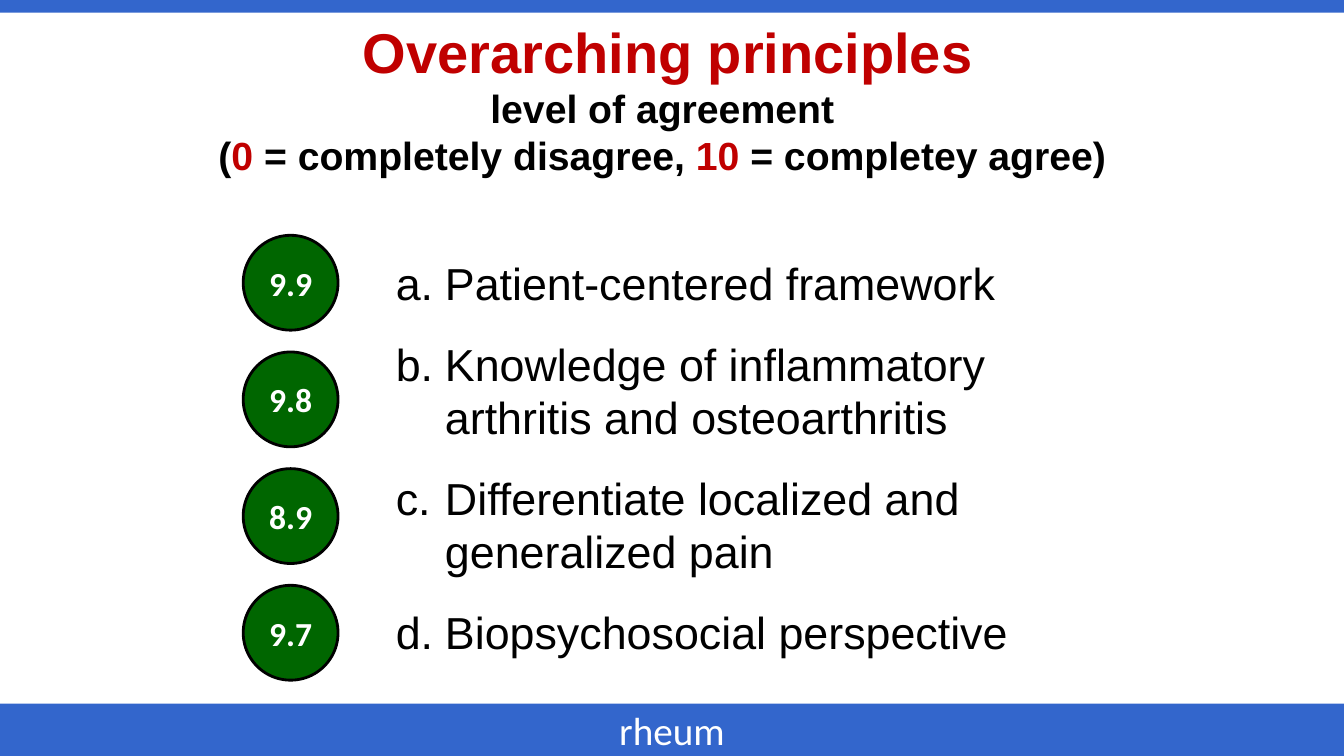
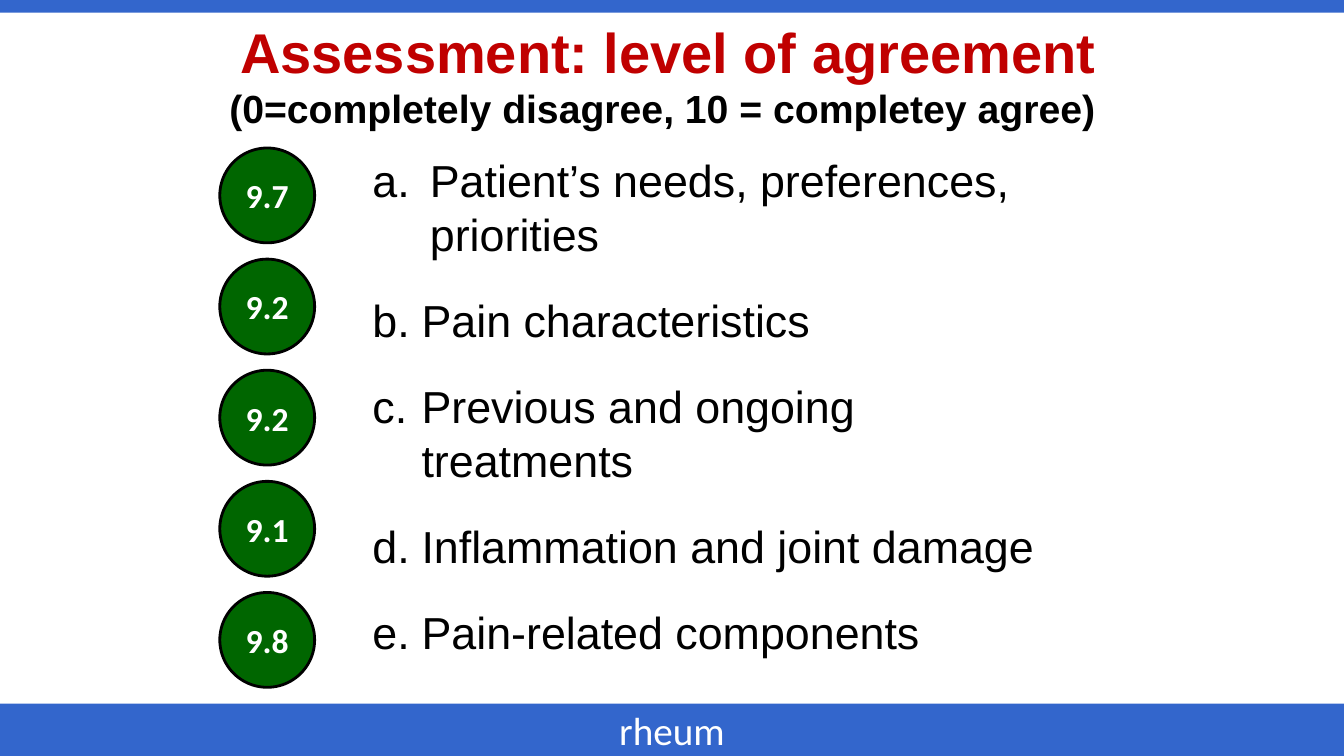
from dataclasses import dataclass
from typing import Any

from lxml.etree import SubElement
from pptx import Presentation
from pptx.dml.color import RGBColor
from pptx.enum.shapes import MSO_SHAPE
from pptx.enum.text import MSO_ANCHOR, MSO_AUTO_SIZE, PP_ALIGN
from pptx.oxml.ns import qn
from pptx.util import Cm, Pt

COLORS = {"blue": "3366CC", "green": "006600", "red": "C00000",
          "black": "000000", "white": "FFFFFF"}
FORMATS: dict[str, dict[str, Any]] = {
    "title": {"name": "Arial", "size": Pt(40), "bold": True},
    "subtitle": {"name": "Arial", "size": Pt(28), "bold": True},
    "item": {"name": "Arial", "size": Pt(32), "bold": False},
    "badge": {"name": "Calibri", "size": Pt(24), "bold": True},
    "footer": {"name": "Calibri", "size": Pt(28), "bold": False},
}
FRAME = {"word_wrap": True, "auto_size": MSO_AUTO_SIZE.NONE,
         "vertical_anchor": MSO_ANCHOR.TOP}
LEADING = 1.2
WIDTH, HEIGHT = 33.87, 19.05
BADGE_SIZE = 2.39
MASTER_FIRST_ID = 101


@dataclass(frozen=True)
class Item:
    score: str
    text: str
    indent: float = 1.24


@dataclass(frozen=True)
class Agreement:
    title: str
    subtitles: list[list[tuple[str, str]]]
    items: list[Item]
    badge_left: float
    badge_top: float
    pitch: float
    list_top: float
    gap: float


SLIDES = [
    Agreement(
        "Overarching principles",
        [[("level of agreement ", "black")],
         [("(", "black"), ("0", "red"), (" = completely disagree, ", "black"),
          ("10", "red"), (" = completey agree) ", "black")]],
        [Item("9.9", "Patient-centered framework"),
         Item("9.8", "Knowledge of inflammatory\varthritis and osteoarthritis"),
         Item("8.9", "Differentiate localized and\vgeneralized pain"),
         Item("9.7", "Biopsychosocial perspective")],
        6.13, 5.93, 2.94, 6.32, 19),
    Agreement(
        "Assessment: level of agreement",
        [[("(0=completely disagree, 10 = completey agree) ", "black")]],
        [Item("9.7", "Patient’s needs, preferences,\vpriorities", 1.45),
         Item("9.2", "Pain characteristics"),
         Item("9.2", "Previous and ongoing\vtreatments"),
         Item("9.1", "Inflammation and joint damage"),
         Item("9.8", "Pain-related components")],
        5.54, 3.73, 2.8, 3.73, 23),
]


def rgb(color: str) -> RGBColor:
    return RGBColor.from_string(COLORS[color])


def set_all(obj: Any, values: dict[str, Any]) -> None:
    for name, value in values.items():
        setattr(obj, name, value)


def place(sp: Any, left: float, top: float, width: float, height: float) -> None:
    set_all(sp, {"left": Cm(left), "top": Cm(top),
                 "width": Cm(width), "height": Cm(height)})


def style_run(r: Any, style: str, color: str) -> None:
    set_all(r.font, FORMATS[style])
    r.font.color.rgb = rgb(color)


def space(p: Any, style: str, before: float = 0) -> None:
    leading = FORMATS[style]["size"].pt * LEADING
    set_all(p, {"line_spacing": Pt(leading), "space_before": Pt(before),
                "space_after": Pt(0)})


def add_filled(shapes: Any, kind: MSO_SHAPE, box: tuple, color: str) -> Any:
    sp = shapes.add_shape(kind, *map(Cm, box))
    sp.shadow.inherit = False
    sp.fill.solid()
    sp.fill.fore_color.rgb = rgb(color)
    sp.line.fill.background()
    return sp


def add_master_bands(prs: Any, slide: Any) -> None:
    bands = [add_filled(slide.shapes, MSO_SHAPE.RECTANGLE, box, "blue")
             for box in ((0, 0, WIDTH, 0.32), (0, 17.73, WIDTH, 1.32))]
    footer = slide.shapes.add_textbox(Cm(0), Cm(17.68), Cm(WIDTH), Cm(1.37))
    set_all(footer.text_frame, FRAME)
    p = footer.text_frame.paragraphs[0]
    p.alignment = PP_ALIGN.CENTER
    r = p.add_run()
    r.text = "rheum"
    style_run(r, "footer", "white")
    for number, sp in enumerate((*bands, footer), MASTER_FIRST_ID):
        sp.element.nvSpPr.cNvPr.set("id", str(number))
        prs.slide_master.shapes.element.append(sp.element)


def fill_title(sp: Any, page: Agreement) -> None:
    place(sp, 4.94, 0.31, 23.77, 1.99 + 1.19 * len(page.subtitles))
    tf = sp.text_frame
    set_all(tf, FRAME)
    lines = [[(page.title, "red")], *page.subtitles]
    for i, line in enumerate(lines):
        p = tf.add_paragraph() if i else tf.paragraphs[0]
        style = "subtitle" if i else "title"
        p.alignment = PP_ALIGN.CENTER
        space(p, style)
        for text, color in line:
            r = p.add_run()
            r.text = text
            style_run(r, style, color)


def fill_list(sp: Any, page: Agreement) -> None:
    place(sp, page.badge_left + 3.59, page.list_top, 17.5, 17.2 - page.list_top)
    tf = sp.text_frame
    set_all(tf, FRAME)
    for i, item in enumerate(page.items):
        p = tf.add_paragraph() if i else tf.paragraphs[0]
        p.text = item.text
        pPr = p._p.get_or_add_pPr()
        pPr.set("marL", str(Cm(item.indent)))
        pPr.set("indent", str(-Cm(item.indent)))
        SubElement(pPr, qn("a:buFont"), typeface="Arial")
        SubElement(pPr, qn("a:buAutoNum"), type="alphaLcPeriod")
        p.alignment = PP_ALIGN.LEFT
        space(p, "item", page.gap if i else 0)
        for r in p.runs:
            style_run(r, "item", "black")


def add_badge(shapes: Any, score: str, left: float, top: float) -> None:
    sp = add_filled(shapes, MSO_SHAPE.OVAL,
                    (left, top, BADGE_SIZE, BADGE_SIZE), "green")
    sp.line.color.rgb = rgb("black")
    sp.line.width = Pt(2)
    tf = sp.text_frame
    set_all(tf, {"word_wrap": False, "vertical_anchor": MSO_ANCHOR.MIDDLE})
    p = tf.paragraphs[0]
    p.alignment = PP_ALIGN.CENTER
    r = p.add_run()
    r.text = score
    style_run(r, "badge", "white")


def main() -> None:
    prs = Presentation()
    set_all(prs, {"slide_width": Cm(WIDTH), "slide_height": Cm(HEIGHT)})
    for i, page in enumerate(SLIDES):
        slide = prs.slides.add_slide(prs.slide_layouts[1])
        if i == 0:
            add_master_bands(prs, slide)
        fill_title(slide.shapes.title, page)
        fill_list(slide.placeholders[1], page)
        for row, item in enumerate(page.items):
            add_badge(slide.shapes, item.score, page.badge_left,
                      page.badge_top + row * page.pitch)
    prs.save("out.pptx")


if __name__ == "__main__":
    main()
